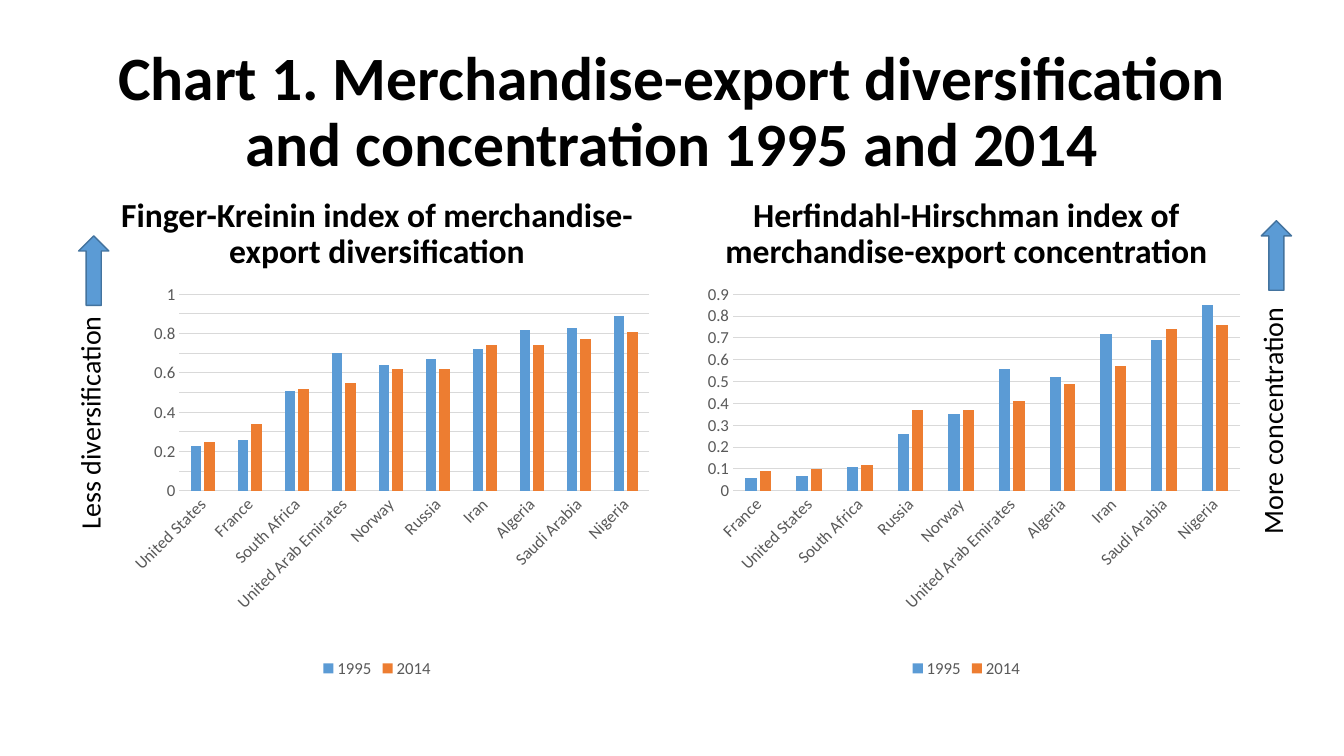
from collections import namedtuple
from dataclasses import dataclass

from lxml import etree
from pptx import Presentation
from pptx.chart.data import CategoryChartData
from pptx.dml.color import RGBColor
from pptx.enum.chart import XL_CHART_TYPE, XL_LEGEND_POSITION, XL_TICK_MARK
from pptx.enum.shapes import MSO_SHAPE
from pptx.enum.text import MSO_ANCHOR, MSO_AUTO_SIZE, PP_ALIGN
from pptx.oxml.ns import qn
from pptx.util import Inches, Pt

COLUMNS = XL_CHART_TYPE.COLUMN_CLUSTERED
LEGEND_BOTTOM = XL_LEGEND_POSITION.BOTTOM
NO_TICK = XL_TICK_MARK.NONE
RIGHT_ARROW = MSO_SHAPE.RIGHT_ARROW
MIDDLE, BOTTOM = MSO_ANCHOR.MIDDLE, MSO_ANCHOR.BOTTOM
NO_FIT, GROW = MSO_AUTO_SIZE.NONE, MSO_AUTO_SIZE.SHAPE_TO_FIT_TEXT
CENTER = PP_ALIGN.CENTER
COMPARISON_LAYOUT = 4

Box = namedtuple("Box", "left top width height")


@dataclass(frozen=True)
class Theme:
    font: str = "Calibri"
    ink: RGBColor = RGBColor(0, 0, 0)
    label: RGBColor = RGBColor(0x59, 0x59, 0x59)
    grid: RGBColor = RGBColor(0xD9, 0xD9, 0xD9)
    blue: RGBColor = RGBColor(0x5B, 0x9B, 0xD5)
    outline: RGBColor = RGBColor(0x43, 0x73, 0x9E)
    orange: RGBColor = RGBColor(0xED, 0x7D, 0x31)
    title_size: int = 44
    heading_size: int = 24
    side_size: int = 20
    label_size: int = 12


THEME = Theme()

DIVERSIFICATION = [
    ("United States", 0.23, 0.25), ("France", 0.26, 0.34),
    ("South Africa", 0.51, 0.52), ("United Arab Emirates", 0.7, 0.55),
    ("Norway", 0.64, 0.62), ("Russia", 0.67, 0.62), ("Iran", 0.72, 0.74),
    ("Algeria", 0.82, 0.74), ("Saudi Arabia", 0.83, 0.77),
    ("Nigeria", 0.89, 0.81),
]
CONCENTRATION = [
    ("France", 0.06, 0.09), ("United States", 0.07, 0.1),
    ("South Africa", 0.11, 0.12), ("Russia", 0.26, 0.37),
    ("Norway", 0.35, 0.37), ("United Arab Emirates", 0.56, 0.41),
    ("Algeria", 0.52, 0.49), ("Iran", 0.72, 0.57),
    ("Saudi Arabia", 0.69, 0.74), ("Nigeria", 0.85, 0.76),
]


def inches(box):
    return [Inches(length) for length in box]


def style_font(font, size, color, bold=False):
    font.name = THEME.font
    font.size = Pt(size)
    font.color.rgb = color
    font.bold = bold


def fill_placeholder(holder, box, text, size, anchor):
    holder.left, holder.top, holder.width, holder.height = inches(box)
    frame = holder.text_frame
    frame.text = text
    frame.word_wrap = True
    frame.auto_size = NO_FIT
    frame.vertical_anchor = anchor
    para = frame.paragraphs[0]
    para.alignment = CENTER
    para.line_spacing = 0.9
    para.space_before = Pt(0)
    style_font(para.font, size, THEME.ink, bold=True)


def set_plot_area(chart, box, label_width):
    """Fix the inner plot area; lengths become shares of the chart's box."""
    right_margin, top_margin, plot_height = 0.12, 0.18, 1.95
    shares = {
        "x": label_width / box.width,
        "y": top_margin / box.height,
        "w": (box.width - label_width - right_margin) / box.width,
        "h": plot_height / box.height,
    }
    plot_area = chart._chartSpace.chart.plotArea
    for old in plot_area.findall(qn("c:layout")):
        plot_area.remove(old)
    layout = etree.Element(qn("c:layout"))
    manual = etree.SubElement(layout, qn("c:manualLayout"))
    settings = [("layoutTarget", "inner"), ("xMode", "edge"), ("yMode", "edge")]
    for tag, value in settings + list(shares.items()):
        etree.SubElement(manual, qn("c:" + tag)).set("val", str(value))
    plot_area.insert(0, layout)


def add_columns(page, box, rows, top_value, label_width):
    names, first, last = zip(*rows)
    data = CategoryChartData()
    data.categories = names
    data.add_series("1995", first)
    data.add_series("2014", last)
    chart = page.shapes.add_chart(COLUMNS, *inches(box), data).chart
    style_font(chart.font, THEME.label_size, THEME.label)
    chart.has_title = False
    chart.has_legend = True
    chart.legend.position = LEGEND_BOTTOM
    chart.legend.include_in_layout = False
    style_font(chart.legend.font, THEME.label_size, THEME.label)

    # Columns
    plot = chart.plots[0]
    plot.gap_width, plot.overlap = 219, -27
    plot.vary_by_categories = False
    for series, color in zip(plot.series, (THEME.blue, THEME.orange)):
        series.format.fill.solid()
        series.format.fill.fore_color.rgb = color

    # Axes
    countries, values = chart.category_axis, chart.value_axis
    for axis in (countries, values):
        axis.major_tick_mark = axis.minor_tick_mark = NO_TICK
        style_font(axis.tick_labels.font, THEME.label_size, THEME.label)
    countries.tick_labels._element.find(qn("c:txPr")).find(
        qn("a:bodyPr")).set("rot", "-2700000")
    values.minimum_scale, values.maximum_scale = 0, top_value
    values.major_unit = 0.1
    values.tick_labels.number_format = "General"
    values.tick_labels.number_format_is_linked = False
    values.format.line.fill.background()
    for line in (countries.format.line, values.major_gridlines.format.line):
        line.color.rgb = THEME.grid
        line.width = Pt(0.75)
    set_plot_area(chart, box, label_width)


def add_panel(page, box, heading_holder, heading, rows, top_value, label_width):
    heading_height = 0.9
    fill_placeholder(heading_holder, box._replace(height=heading_height),
                     heading, THEME.heading_size, BOTTOM)
    chart_box = Box(box.left, box.top + heading_height,
                    box.width, box.height - heading_height)
    add_columns(page, chart_box, rows, top_value, label_width)


def centered(center_x, center_y, width, height):
    return Box(center_x - width / 2, center_y - height / 2, width, height)


def add_side_note(page, box, text, text_width):
    """Upward arrow at the top of a narrow box, vertical text at its foot."""
    center_x = box.left + box.width / 2
    arrow_length, text_height = 0.69, 0.44

    # Arrow
    arrow_box = centered(center_x, box.top + arrow_length / 2, arrow_length, 0.3)
    arrow = page.shapes.add_shape(RIGHT_ARROW, *inches(arrow_box))
    arrow.rotation = 270
    arrow.shadow.inherit = False
    arrow.fill.solid()
    arrow.fill.fore_color.rgb = THEME.blue
    arrow.line.color.rgb = THEME.outline
    arrow.line.width = Pt(1)

    # Vertical text
    text_box = centered(center_x - 0.04, box.top + box.height - text_width / 2,
                        text_width, text_height)
    note = page.shapes.add_textbox(*inches(text_box))
    note.rotation = 270
    frame = note.text_frame
    frame.text = text
    frame.word_wrap = False
    frame.auto_size = GROW
    style_font(frame.paragraphs[0].font, THEME.side_size, THEME.ink)


def build_comparison(deck):
    page = deck.slides.add_slide(deck.slide_layouts[COMPARISON_LAYOUT])
    holders = {holder.placeholder_format.idx: holder
               for holder in page.placeholders}
    for idx, holder in holders.items():
        if idx not in (0, 1, 3):
            holder._element.getparent().remove(holder._element)

    fill_placeholder(
        holders[0], Box(0.92, 0.4, 11.5, 1.45),
        "Chart 1. Merchandise-export diversification and concentration "
        "1995 and 2014", THEME.title_size, MIDDLE)
    add_panel(page, Box(0.92, 1.84, 5.64, 4.93), holders[1],
              "Finger-Kreinin index of merchandise-export diversification",
              DIVERSIFICATION, 1, 0.86)
    add_panel(page, Box(6.75, 1.84, 5.67, 4.93), holders[3],
              "Herfindahl-Hirschman index of merchandise-export concentration",
              CONCENTRATION, 0.9, 0.52)
    add_side_note(page, Box(0.78, 2.34, 0.3, 3.01), "Less diversification", 2.41)
    add_side_note(page, Box(12.51, 2.19, 0.3, 3.21), "More concentration", 2.48)


def main():
    deck = Presentation()
    deck.slide_width, deck.slide_height = Inches(13.33), Inches(7.5)
    build_comparison(deck)
    deck.save("out.pptx")


if __name__ == "__main__":
    main()
